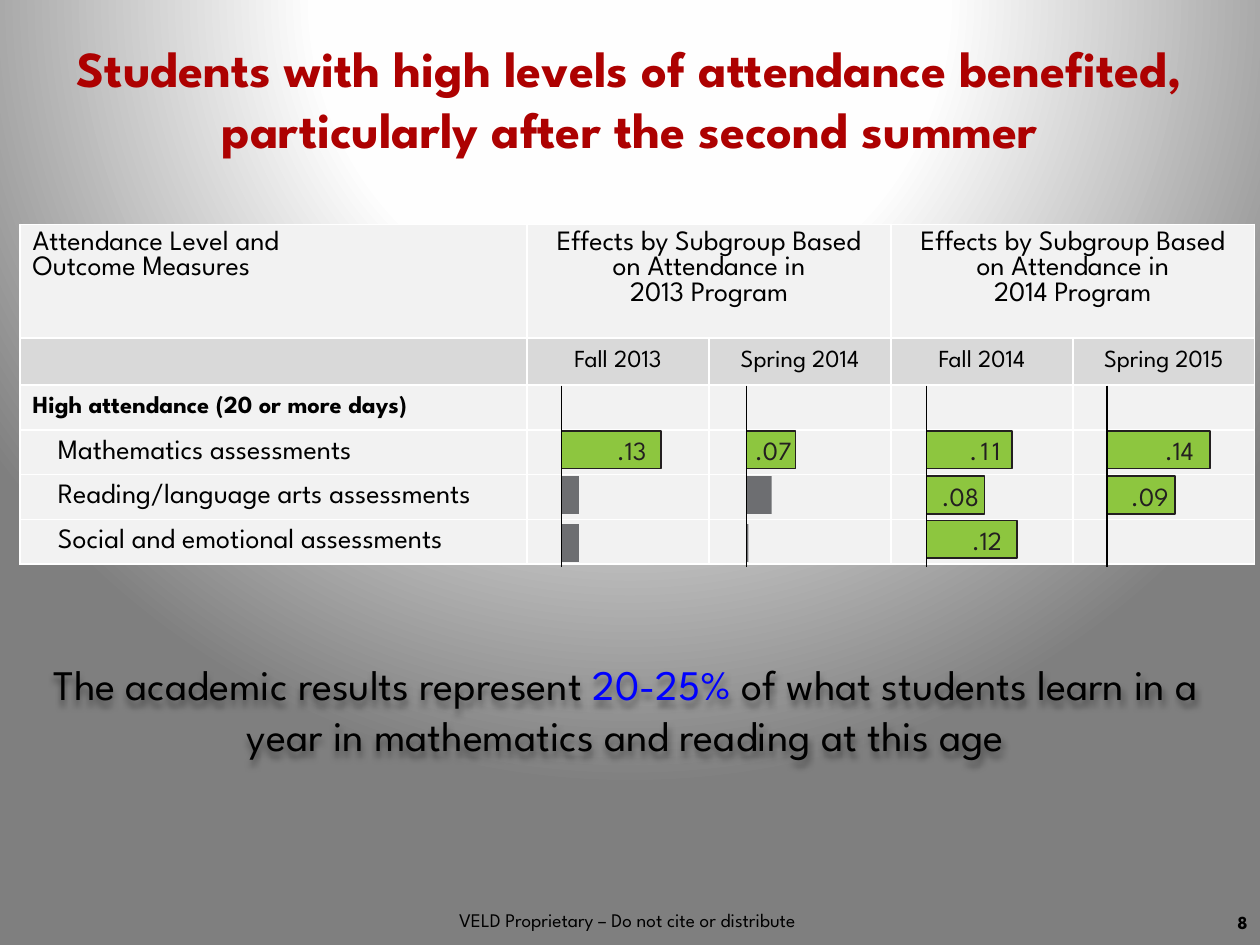
import pptx
import pptx.util
import pptx.dml.color
import pptx.enum.shapes
import pptx.enum.text
import pptx.oxml
import pptx.oxml.ns

RGB = pptx.dml.color.RGBColor
ALIGN = pptx.enum.text.PP_ALIGN
MID = pptx.enum.text.MSO_ANCHOR.MIDDLE
TOP = pptx.enum.text.MSO_ANCHOR.TOP
RECT = pptx.enum.shapes.MSO_SHAPE.RECTANGLE

BLACK = RGB(0x00, 0x00, 0x00)
RED = RGB(0xAD, 0x01, 0x01)
BLUE = RGB(0x00, 0x00, 0xFF)
PALE = RGB(0xF2, 0xF2, 0xF2)
SILVER = RGB(0xD9, 0xD9, 0xD9)
GRAY = RGB(0x6D, 0x6E, 0x71)
GREEN = RGB(0x8D, 0xC6, 0x3F)
INK = RGB(0x23, 0x1F, 0x20)
NS = pptx.oxml.ns.nsdecls("a", "p")


def grid(*cells):
    """Lengths on a slide grid of 100 columns by 75 rows."""
    return [pptx.util.Inches(cell / 10) for cell in cells]


def write(box, text, size=16, color=BLACK, bold=False, align=ALIGN.LEFT,
          anchor=TOP, inset=(1, 0.5, 1, 0.5), wrap=True, gap=0):
    """Fill a text frame or table cell; text is a string or (string, colour) pairs."""
    frame = getattr(box, "text_frame", box)
    frame.word_wrap = wrap
    box.vertical_anchor = anchor
    box.margin_left, box.margin_top, box.margin_right, box.margin_bottom = grid(*inset)
    para = frame.paragraphs[0]
    para.alignment = align
    for part, tint in [(text, color)] if isinstance(text, str) else text:
        for i, line in enumerate(part.split("\n")):
            if i:
                para.add_line_break()
            run = para.add_run()
            run.text = line
            run.font.name = "League Spartan"
            run.font.size = pptx.util.Pt(size)
            run.font.bold = bold
            run.font.color.rgb = tint
            if gap:
                run.font._element.set("spc", str(gap * 100))


deck = pptx.Presentation()
deck.slide_width, deck.slide_height = grid(100, 75)
slide = deck.slides.add_slide(deck.slide_layouts[6])
shapes = slide.shapes

# Background glow
stops = "".join(
    f'<a:gs pos="{pos}000"><a:srgbClr val="{tint}"/></a:gs>'
    for pos, tint in [(0, "FFFFFF"), (40, "FEFEFE"), (100, "7F7F7F")])
slide.element.cSld.insert(0, pptx.oxml.parse_xml(
    f'<p:bg {NS}><p:bgPr><a:gradFill rotWithShape="1"><a:gsLst>{stops}</a:gsLst>'
    '<a:path path="circle"><a:fillToRect l="50000" t="-80000" r="50000" b="180000"/>'
    '</a:path></a:gradFill><a:effectLst/></p:bgPr></p:bg>'))

# Footer and page number
write(shapes.add_textbox(*grid(69.4, 71.8, 30.6, 2.8)).text_frame, "8",
      size=10.5, bold=True, align=ALIGN.RIGHT)
write(shapes.add_textbox(*grid(4.1, 71.6, 91.4, 2.9)).text_frame,
      "VELD Proprietary – Do not cite or distribute", size=11, align=ALIGN.CENTER)

# Table
table = shapes.add_table(6, 5, *grid(1.6, 17.8, 98, 27)).table
for col, width in zip(table.columns, grid(40.24, *[14.44] * 4)):
    col.width = width
for row, height in zip(table.rows, grid(9.04, 3.74, *[3.55] * 4)):
    row.height = height
for col in (1, 3):
    table.cell(0, col).merge(table.cell(0, col + 1))

effect = "Effects by Subgroup Based on Attendance in\n{} Program"
rows = [
    ["Attendance Level and\nOutcome Measures", effect.format(2013), "",
     effect.format(2014), ""],
    ["", "Fall 2013", "Spring 2014", "Fall 2014", "Spring 2015"],
    ["High attendance (20 or more days)"] + [""] * 4,
    ["Mathematics assessments"] + [""] * 4,
    ["Reading/language arts assessments"] + [""] * 4,
    ["Social and emotional assessments"] + [""] * 4,
]
for r, row in enumerate(rows):
    pad = 0 if r > 1 else 0.5
    for c, text in enumerate(row):
        cell = table.cell(r, c)
        cell.fill.solid()
        cell.fill.fore_color.rgb = SILVER if r == 1 else PALE
        cell.margin_top = cell.margin_bottom = 0
        # White borders go ahead of the fill
        for i, side in enumerate("LRTB"):
            cell._tc.get_or_add_tcPr().insert(i, pptx.oxml.parse_xml(
                f'<a:ln{side} {NS} w="12700"><a:solidFill><a:srgbClr val="FFFFFF"/>'
                f'</a:solidFill></a:ln{side}>'))
        if text:
            write(cell, text, size=14 if r in (1, 2) else 16, bold=r == 2,
                  align=ALIGN.CENTER if c else ALIGN.LEFT,
                  anchor=MID if r else TOP,
                  inset=(3 if r > 2 else 1, pad, 1, pad))

# Effect bars: axis, top, width, label, label offset
axes = [44.55, 59.25, 73.53, 87.85]
bars = [
    (0, 34.2, 7.9, ".13", 4.4), (1, 34.2, 3.9, ".07", 0.65),
    (2, 34.2, 6.8, ".11", 3.4), (3, 34.2, 8.2, ".14", 4.6),
    (2, 37.8, 4.6, ".08", 1.2), (3, 37.8, 5.4, ".09", 1.9),
    (2, 41.3, 7.2, ".12", 3.6),
    (0, 37.8, 1.4, "", 0), (0, 41.6, 1.4, "", 0),
    (1, 37.8, 2, "", 0), (1, 41.6, 0.15, "", 0),
]
for axis, top, width, label, shift in bars:
    left = axes[axis]
    bar = shapes.add_shape(RECT, *grid(left, top, width, 3))
    bar.shadow.inherit = False
    bar.fill.solid()
    bar.fill.fore_color.rgb = GREEN if label else GRAY
    if label:
        bar.line.color.rgb = INK
        bar.line.width = pptx.util.Pt(0.88)
        tag = shapes.add_textbox(*grid(left + shift, top + 0.3, 3.2, 2.5))
        write(tag.text_frame, label, size=15, color=INK, inset=(0, 0, 0, 0),
              wrap=False, gap=2 if label == ".11" else 0)
    else:
        bar.line.fill.background()

# Zero lines
for x in axes:
    line = shapes.add_connector(pptx.enum.shapes.MSO_CONNECTOR.STRAIGHT,
                                *grid(x, 30.6, x, 45))
    line.line.color.rgb = BLACK
    line.line.width = pptx.util.Pt(0.75)
    line._element.spPr.append(pptx.oxml.parse_xml(f'<a:effectLst {NS}/>'))

# Title
write(shapes.add_textbox(*grid(0, 0, 100, 15.5)).text_frame,
      "Students with high levels of attendance benefited, "
      "particularly after the second summer",
      size=28.8, color=RED, bold=True, align=ALIGN.CENTER, anchor=MID)

# Takeaway with a soft shadow
note = shapes.add_textbox(*grid(1.45, 50.15, 96.4, 12.3))
write(note.text_frame,
      [("The academic results represent ", BLACK), ("20-25% ", BLUE),
       ("of what students learn in a year in mathematics and reading at this age", BLACK)],
      size=24, align=ALIGN.CENTER, anchor=MID)
note._element.spPr.append(pptx.oxml.parse_xml(
    f'<a:effectLst {NS}><a:outerShdw blurRad="38100" dist="38100" dir="5400000">'
    '<a:srgbClr val="000000"><a:alpha val="40000"/></a:srgbClr></a:outerShdw></a:effectLst>'))

deck.save("out.pptx")
